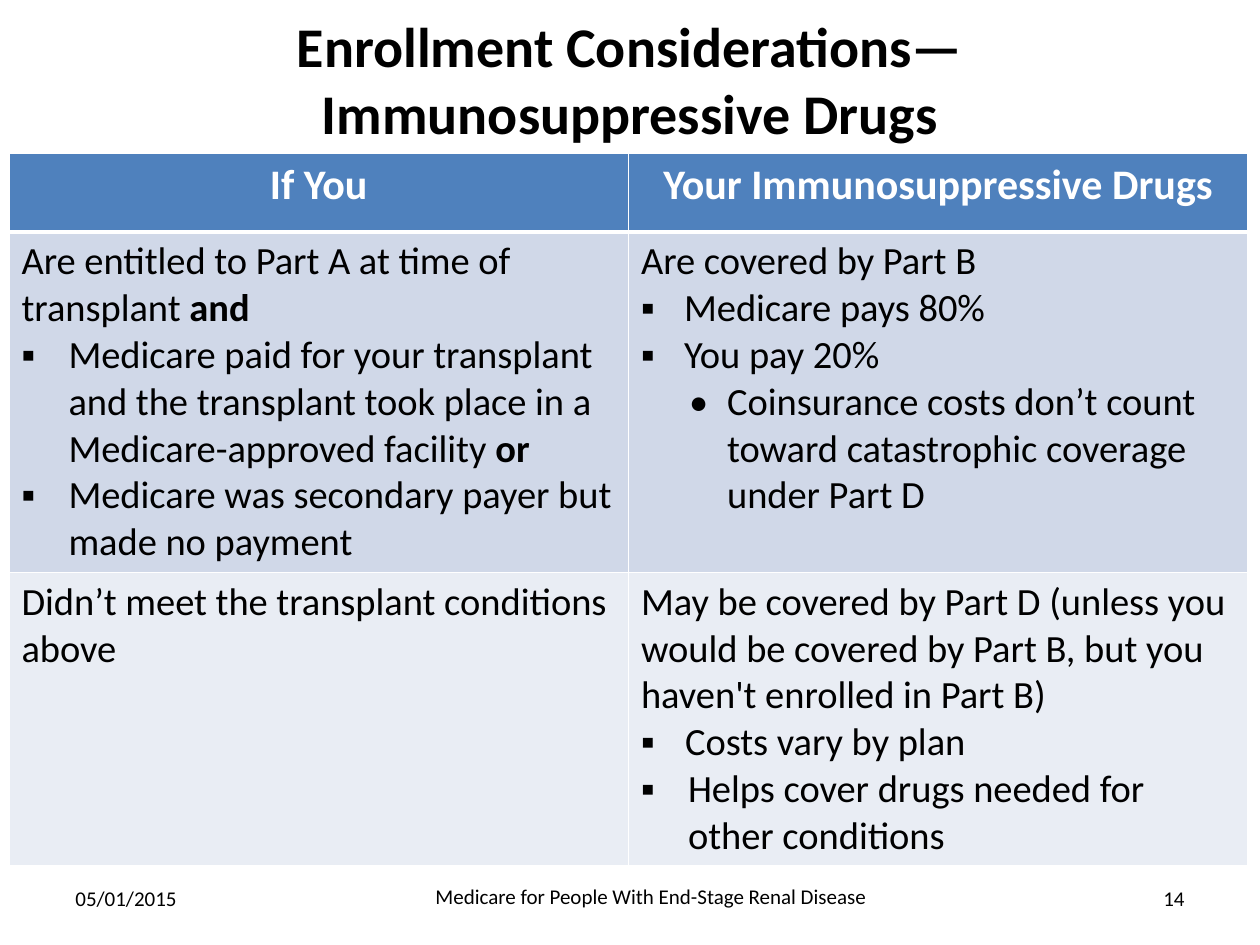
from dataclasses import dataclass
from lxml import etree
from pptx import Presentation
from pptx import util as u
from pptx.dml import color as c
from pptx.enum import text as t
from pptx.oxml import ns


@dataclass(frozen=True)
class Theme:
    font: str = "Calibri"
    ink: str = "000000"
    paper: str = "FFFFFF"
    head: str = "4F81BD"
    bands: tuple = ("D0D8E8", "E9EDF4")
    title: int = 32
    label: int = 24
    body: int = 22
    foot: int = 12


@dataclass(frozen=True)
class Para:
    lead: str
    tail: str = ""
    left: int = 0
    hang: int = 0
    mark: str = ""


THEME = Theme()
SCALE = 914400 / 126
MID, LEFT, RIGHT = t.PP_ALIGN.CENTER, t.PP_ALIGN.LEFT, t.PP_ALIGN.RIGHT

HEADS = ("If You", "Your Immunosuppressive Drugs")
ROWS = (
    (
        (
            Para("Are entitled to Part A at time of transplant ", "and"),
            Para("Medicare paid for your transplant and the transplant took place "
                 "in a Medicare-approved facility ", "or", 47, 47, "▪"),
            Para("Medicare was secondary payer but made no payment", "", 47, 47, "▪"),
        ),
        (
            Para("Are covered by Part B"),
            Para("Medicare pays 80%", "", 43, 43, "▪"),
            Para("You pay 20%", "", 43, 43, "▪"),
            Para("Coinsurance costs don’t count toward catastrophic coverage "
                 "under Part D", "", 86, 38, "•"),
        ),
    ),
    (
        (Para("Didn’t meet the transplant conditions above"),),
        (
            Para("May be covered by Part D (unless you would be covered by Part B, "
                 "but you haven't enrolled in Part B)"),
            Para("Costs vary by plan", "", 44, 44, "▪"),
            Para("Helps cover drugs needed for other conditions", "", 47, 47, "▪"),
        ),
    ),
)


def px(n):
    return u.Emu(round(n * SCALE))


def style(para, size, tint=THEME.ink, bold=False, align=LEFT):
    para.alignment = align
    for run in para.runs:
        font = run.font
        font.name, font.size, font.bold = THEME.font, u.Pt(size), bold
        font.color.rgb = c.RGBColor.from_string(tint)


def place(shape, box):
    shape.left, shape.top, shape.width, shape.height = map(px, box)


def bullet(para, item):
    props = para._p.get_or_add_pPr()
    props.set("marL", str(px(item.left)))
    props.set("indent", str(-px(item.hang)))
    face = etree.SubElement(props, ns.qn("a:buFont"))
    face.set("typeface", THEME.font)
    etree.SubElement(props, ns.qn("a:buChar")).set("char", item.mark)


def paint(cell, tint, base=1):
    props = cell._tc.get_or_add_tcPr()
    for side, width in (("L", 1), ("R", 1), ("T", 1), ("B", base)):
        line = etree.SubElement(props, ns.qn("a:ln" + side), w=str(u.Pt(width)))
        fill = etree.SubElement(line, ns.qn("a:solidFill"))
        etree.SubElement(fill, ns.qn("a:srgbClr"), val=THEME.paper)
    cell.fill.solid()
    cell.fill.fore_color.rgb = c.RGBColor.from_string(tint)


def write(cell, items):
    frame = cell.text_frame
    for i, item in enumerate(items):
        para = frame.add_paragraph() if i else frame.paragraphs[0]
        para.text = item.lead
        if item.mark:
            bullet(para, item)
        style(para, THEME.body)
        if item.tail:
            para.add_run().text = item.tail
            font = para.runs[-1].font
            font.name, font.size, font.bold = THEME.font, u.Pt(THEME.body), True
            font.color.rgb = c.RGBColor.from_string(THEME.ink)


def title(slide, box):
    shape = slide.shapes.title
    place(shape, box)
    frame = shape.text_frame
    frame.text = "Enrollment Considerations—\vImmunosuppressive Drugs"
    frame.vertical_anchor = t.MSO_ANCHOR.MIDDLE
    style(frame.paragraphs[0], THEME.title, bold=True, align=MID)


def grid(slide, box, highs):
    table = slide.shapes.add_table(len(highs), len(HEADS), *map(px, box)).table
    for col in table.columns:
        col.width = px(box[2] / len(HEADS))
    for row, high in zip(table.rows, highs):
        row.height = px(high)
    for i, head in enumerate(HEADS):
        cell = table.cell(0, i)
        cell.text_frame.text = head
        style(cell.text_frame.paragraphs[0], THEME.label, THEME.paper, True, MID)
        paint(cell, THEME.head, 3)
    for j, (row, tint) in enumerate(zip(ROWS, THEME.bands), 1):
        for i, items in enumerate(row):
            write(table.cell(j, i), items)
            paint(table.cell(j, i), tint)


def footer(slide, box):
    left, top, wide, high = box
    side = 294
    parts = (
        ("05/01/2015", (left, top, side, high), LEFT, t.MSO_ANCHOR.MIDDLE),
        ("14", (left + wide - side, top, side, high), RIGHT, t.MSO_ANCHOR.MIDDLE),
        ("Medicare for People With End-Stage Renal Disease",
         (left + 252, top + 4, 672, 73), MID, t.MSO_ANCHOR.TOP),
    )
    for words, spot, align, anchor in parts:
        frame = slide.shapes.add_textbox(*map(px, spot)).text_frame
        frame.word_wrap = True
        frame.vertical_anchor = anchor
        frame.text = words
        style(frame.paragraphs[0], THEME.foot, align=align)


def main():
    deck = Presentation()
    deck.slide_width, deck.slide_height = px(1260), px(945)
    slide = deck.slides.add_slide(deck.slide_layouts[5])
    title(slide, (0, 0, 1260, 158))
    grid(slide, (9, 153, 1239, 709), (79, 340, 290))
    footer(slide, (63, 873, 1134, 50))
    deck.save("out.pptx")


if __name__ == "__main__":
    main()
